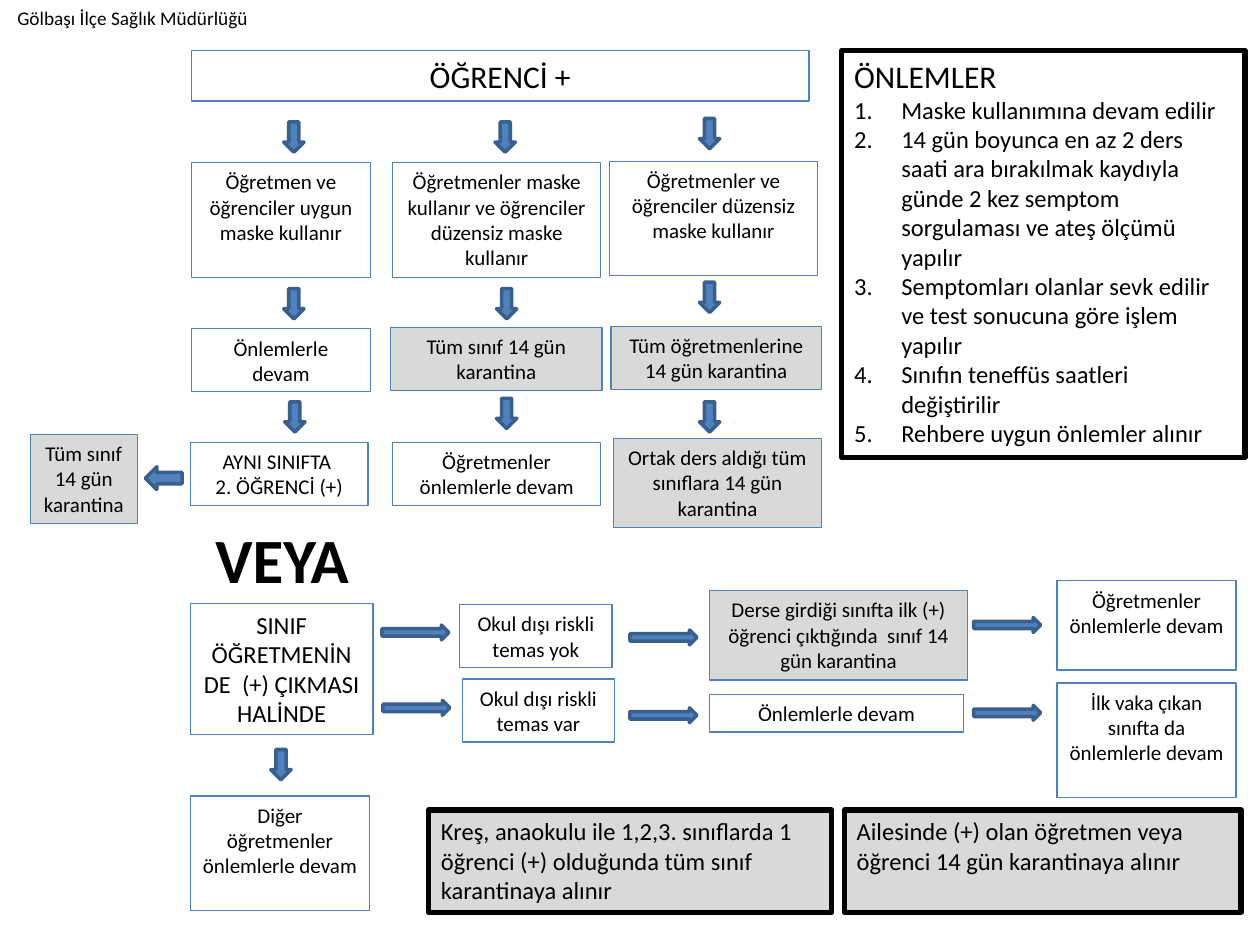
"""Builds a flow chart slide of school quarantine rules for positive cases."""
from dataclasses import dataclass
from typing import Optional

from lxml.etree import SubElement
from pptx import Presentation
from pptx.dml.color import RGBColor
from pptx.enum.shapes import MSO_SHAPE
from pptx.enum.text import MSO_ANCHOR, MSO_AUTO_SIZE, PP_ALIGN
from pptx.oxml.ns import qn
from pptx.util import Cm, Pt

BLUE = RGBColor(0x4F, 0x81, 0xBD)
DARK_BLUE = RGBColor(0x3A, 0x5F, 0x8C)
GREY = RGBColor(0xD9, 0xD9, 0xD9)
BLACK = RGBColor(0, 0, 0)
FONT = "Calibri"


@dataclass(frozen=True)
class Step:
    text: str
    left: float
    top: float
    width: float
    height: float
    fill: Optional[RGBColor] = None
    size: int = 12
    framed: bool = False


@dataclass(frozen=True)
class Arrow:
    left: float
    top: float
    kind: MSO_SHAPE = MSO_SHAPE.DOWN_ARROW
    width: float = 0.41
    height: float = 0.61
    rotation: int = 0


@dataclass(frozen=True)
class Label:
    text: str
    left: float
    top: float
    width: float
    height: float
    size: int
    bold: bool = False
    align: PP_ALIGN = PP_ALIGN.LEFT


STEPS = [
    Step("ÖĞRENCİ +", 3.86, 1.02, 12.45, 1.02, size=18),
    Step("Öğretmen ve öğrenciler uygun maske kullanır", 3.86, 3.28, 3.61, 2.31),
    Step("Öğretmenler maske kullanır ve öğrenciler düzensiz maske kullanır",
         7.92, 3.28, 4.19, 2.31),
    Step("Öğretmenler ve öğrenciler düzensiz maske kullanır", 12.29, 3.25, 4.19, 2.31),
    Step("Önlemlerle devam", 3.86, 6.63, 3.61, 1.27),
    Step("Tüm sınıf 14 gün karantina", 7.87, 6.6, 4.27, 1.27, GREY),
    Step("Tüm öğretmenlerine 14 gün karantina", 12.32, 6.58, 4.24, 1.27, GREY),
    Step("AYNI SINIFTA \n2. ÖĞRENCİ (+)", 3.84, 8.92, 3.58, 1.27),
    Step("Öğretmenler önlemlerle devam", 7.92, 8.92, 4.19, 1.27),
    Step("Ortak ders aldığı tüm sınıflara 14 gün karantina", 12.37, 8.84, 4.19, 1.8, GREY),
    Step("Tüm sınıf 14 gün karantina", 0.61, 8.76, 2.16, 1.8, GREY),
    Step("SINIF ÖĞRETMENİN DE  (+) ÇIKMASI HALİNDE", 3.84, 12.17, 3.68, 2.64, size=14),
    Step("Okul dışı riskli temas yok", 9.27, 12.19, 3.07, 1.27),
    Step("Okul dışı riskli temas var", 9.32, 13.69, 3.07, 1.27),
    Step("Derse girdiği sınıfta ilk (+) öğrenci çıktığında  sınıf 14 gün karantina",
         14.3, 11.91, 5.21, 1.8, GREY),
    Step("Önlemlerle devam", 14.3, 14, 5.13, 0.76),
    Step("Öğretmenler önlemlerle devam", 21.31, 11.71, 3.61, 1.8),
    Step("İlk vaka çıkan sınıfta da önlemlerle devam", 21.31, 13.77, 3.61, 2.31),
    Step("Diğer öğretmenler önlemlerle devam", 3.84, 16.05, 3.61, 2.31),
    Step("Ailesinde (+) olan öğretmen veya öğrenci 14 gün karantinaya alınır",
         17.02, 16.33, 8, 2.06, GREY, 14, True),
    Step("Kreş, anaokulu ile 1,2,3. sınıflarda 1 öğrenci (+) olduğunda tüm sınıf "
         "karantinaya alınır", 8.64, 16.33, 8.13, 2.06, GREY, 14, True),
]

PRECAUTIONS = [
    "Maske kullanımına devam edilir",
    "14 gün boyunca en az 2 ders saati ara bırakılmak kaydıyla günde 2 kez semptom "
    "sorgulaması ve ateş ölçümü yapılır",
    "Semptomları olanlar sevk edilir ve test sonucuna göre işlem yapılır",
    "Sınıfın teneffüs saatleri değiştirilir",
    "Rehbere uygun önlemler alınır",
]

DOWN_POSITIONS = [
    (5.72, 2.46), (5.72, 5.82), (5.74, 8.1),
    (9.98, 2.46), (10.01, 5.82), (10.01, 8.03),
    (14.1, 2.39), (14.1, 5.69), (14.1, 8.1),
    (5.46, 15.11),
]
RIGHT_POSITIONS = [
    (7.7, 12.6), (12.7, 12.7), (19.63, 12.45),
    (7.72, 14.12), (12.7, 14.27), (19.63, 14.22),
]
ARROWS = [
    *(Arrow(left, top) for left, top in DOWN_POSITIONS),
    *(Arrow(left, top, MSO_SHAPE.RIGHT_ARROW, 1.35, 0.3) for left, top in RIGHT_POSITIONS),
    Arrow(3.07, 9.27, width=0.46, height=0.74, rotation=90),
]

LABELS = [
    Label("VEYA", 3.86, 10.36, 3.66, 1.8, 36, True, PP_ALIGN.CENTER),
    Label("Gölbaşı İlçe Sağlık Müdürlüğü", 0.1, 0, 7.14, 0.74, 11),
]


def format_text(shape, size: int, align: PP_ALIGN, bold: bool = False) -> None:
    frame = shape.text_frame
    frame.word_wrap = True
    frame.auto_size = MSO_AUTO_SIZE.SHAPE_TO_FIT_TEXT
    frame.vertical_anchor = MSO_ANCHOR.TOP
    for paragraph in frame.paragraphs:
        paragraph.alignment = align
        for run in paragraph.runs:
            run.font.name = FONT
            run.font.size = Pt(size)
            run.font.bold = bold
            run.font.color.rgb = BLACK


def draw_step(slide, step: Step):
    box = slide.shapes.add_shape(MSO_SHAPE.RECTANGLE, Cm(step.left), Cm(step.top),
                                 Cm(step.width), Cm(step.height))
    box.shadow.inherit = False
    if step.fill is None:
        box.fill.background()
    else:
        box.fill.solid()
        box.fill.fore_color.rgb = step.fill
    box.line.color.rgb = BLACK if step.framed else BLUE
    box.line.width = Pt(3 if step.framed else 0.75)
    box.text_frame.text = step.text
    format_text(box, step.size, PP_ALIGN.LEFT if step.framed else PP_ALIGN.CENTER)
    return box


def draw_precautions(slide, items: list[str]) -> None:
    panel = draw_step(slide, Step("\n".join(["ÖNLEMLER", *items]), 16.97, 1.02, 8.13, 8.2,
                                  size=14, framed=True))
    heading, *numbered = panel.text_frame.paragraphs
    heading.runs[0].font.size = Pt(18)
    for paragraph in numbered:
        properties = paragraph._p.get_or_add_pPr()
        properties.set("marL", str(Cm(0.95)))
        properties.set("indent", str(-Cm(0.95)))
        SubElement(properties, qn("a:buFont"), typeface="+mj-lt")
        SubElement(properties, qn("a:buAutoNum"), type="arabicPeriod")


def draw_arrow(slide, arrow: Arrow) -> None:
    pointer = slide.shapes.add_shape(arrow.kind, Cm(arrow.left), Cm(arrow.top),
                                     Cm(arrow.width), Cm(arrow.height))
    pointer.shadow.inherit = False
    pointer.rotation = arrow.rotation
    pointer.fill.solid()
    pointer.fill.fore_color.rgb = BLUE
    pointer.line.color.rgb = DARK_BLUE
    pointer.line.width = Pt(2)


def draw_label(slide, label: Label) -> None:
    caption = slide.shapes.add_textbox(Cm(label.left), Cm(label.top),
                                       Cm(label.width), Cm(label.height))
    caption.text_frame.text = label.text
    format_text(caption, label.size, label.align, label.bold)


def main() -> None:
    presentation = Presentation()
    presentation.slide_width, presentation.slide_height = Cm(25.4), Cm(19.05)
    slide = presentation.slides.add_slide(presentation.slide_layouts[6])
    for step in STEPS:
        draw_step(slide, step)
    draw_precautions(slide, PRECAUTIONS)
    for arrow in ARROWS:
        draw_arrow(slide, arrow)
    for label in LABELS:
        draw_label(slide, label)
    presentation.save("out.pptx")


if __name__ == "__main__":
    main()
